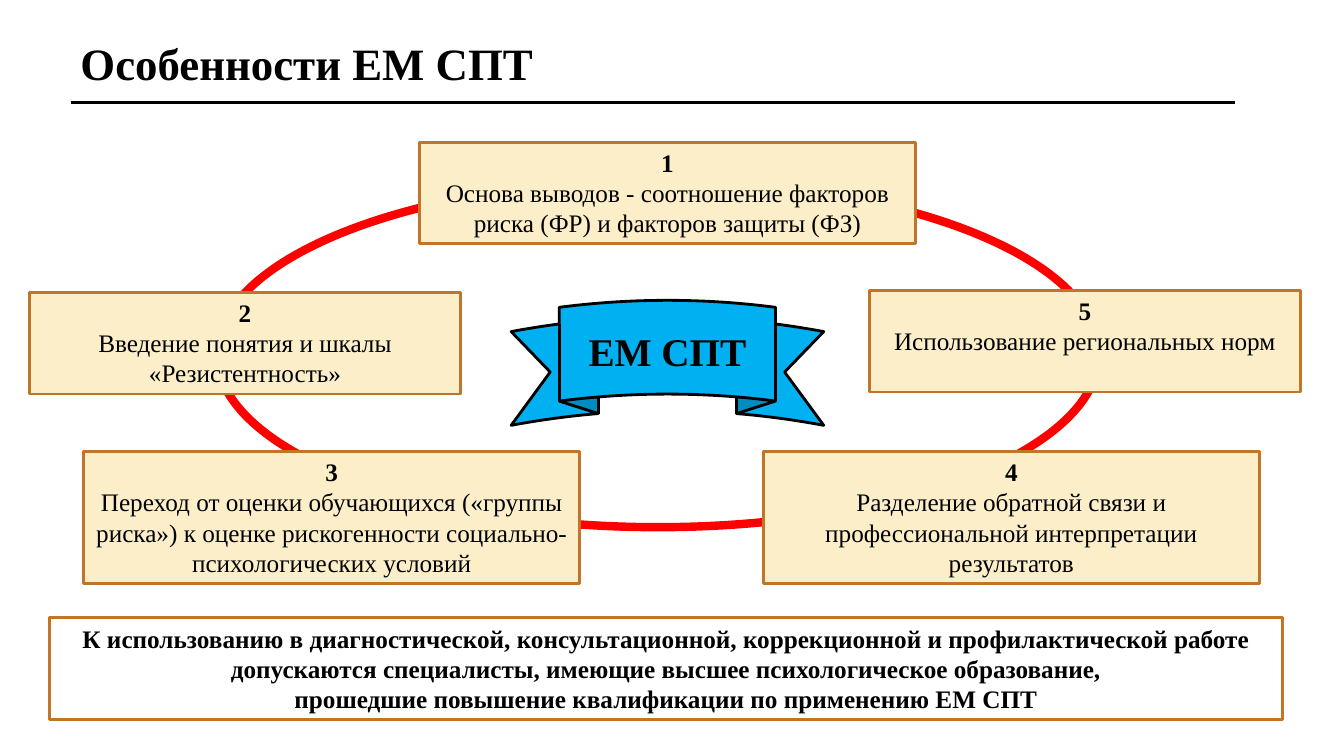
from dataclasses import dataclass

from lxml import etree
from pptx import Presentation
from pptx.dml.color import RGBColor
from pptx.enum import shapes, text
from pptx.oxml.ns import qn
from pptx.shapes.autoshape import Shape
from pptx.slide import Slide
from pptx.util import Inches, Pt


@dataclass(frozen=True)
class Theme:
    font: str = "Times New Roman"
    black: str = "000000"
    white: str = "FFFFFF"
    ring: str = "FF0000"
    ribbon: str = "00B0F0"
    card: str = "FBEEC9"
    border: str = "C17529"
    title_pt: int = 32
    ribbon_pt: int = 28
    body_pt: int = 18
    line_pt: int = 2
    ring_pt: int = 6


@dataclass(frozen=True)
class Box:
    left: float
    top: float
    width: float
    height: float


@dataclass(frozen=True)
class Card:
    number: int
    body: str
    box: Box


T = Theme()
TOP_W, SIDE_W = 4.92, 4.28
SHORT_H, TALL_H = 1.01, 1.31
LOWER_Y = 4.48

CARDS = [
    Card(1, "Основа выводов - соотношение факторов риска (ФР) и факторов защиты (ФЗ)",
         Box(4.16, 1.41, TOP_W, SHORT_H)),
    Card(3, "Переход от оценки обучающихся («группы риска») к оценке рискогенности "
            "социально-психологических условий",
         Box(0.83, LOWER_Y, TOP_W, TALL_H)),
    Card(2, "Введение понятия и шкалы «Резистентность»",
         Box(0.29, 2.9, SIDE_W, SHORT_H)),
    Card(4, "Разделение обратной связи и профессиональной интерпретации результатов",
         Box(7.57, LOWER_Y, TOP_W, TALL_H)),
    Card(5, "Использование региональных норм",
         Box(8.62, 2.88, SIDE_W, SHORT_H)),
]

ADMISSION = [
    "К использованию в диагностической, консультационной, коррекционной и "
    "профилактической работе",
    "допускаются специалисты, имеющие высшее психологическое образование,",
    "прошедшие повышение квалификации по применению ЕМ СПТ",
]


def rgb(color: str) -> RGBColor:
    return RGBColor.from_string(color)


def add_figure(s: Slide, kind: shapes.MSO_SHAPE, box: Box, line: str,
               fill: str | None = None, line_pt: int = T.line_pt) -> Shape:
    """Add a shadowless preset shape; without a fill colour it is hollow."""
    sp = s.shapes.add_shape(kind, Inches(box.left), Inches(box.top),
                            Inches(box.width), Inches(box.height))
    sp.shadow.inherit = False
    if fill:
        sp.fill.solid()
        sp.fill.fore_color.rgb = rgb(fill)
    else:
        sp.fill.background()
    sp.line.color.rgb = rgb(line)
    sp.line.width = Pt(line_pt)
    return sp


def write(sp: Shape, lines: list[str], size: int, bold_lines: int,
          align: text.PP_ALIGN = text.PP_ALIGN.CENTER,
          anchor: text.MSO_ANCHOR = text.MSO_ANCHOR.TOP, wrap: bool = True) -> None:
    """Write one paragraph per line; the first bold_lines are bold."""
    tf = sp.text_frame
    tf.word_wrap = wrap
    tf.vertical_anchor = anchor
    for i, line in enumerate(lines):
        p = tf.add_paragraph() if i else tf.paragraphs[0]
        p.text = line
        p.alignment = align
        p.font.name = T.font
        p.font.size = Pt(size)
        p.font.bold = i < bold_lines
        p.font.color.rgb = rgb(T.black)


def add_title(s: Slide) -> None:
    tb = s.shapes.add_textbox(Inches(0.7), Inches(0.31), Inches(4.74), Inches(0.64))
    write(tb, ["Особенности ЕМ СПТ"], T.title_pt, 1, text.PP_ALIGN.LEFT, wrap=False)
    rule = s.shapes.add_connector(shapes.MSO_CONNECTOR.STRAIGHT, Inches(0.7),
                                  Inches(1.02), Inches(12.25), Inches(1.02))
    rule.line.color.rgb = rgb(T.black)
    rule.line.width = Pt(T.line_pt)
    etree.SubElement(rule._element.spPr, qn("a:effectLst"))


def add_ribbon(s: Slide) -> None:
    ribbon = add_figure(s, shapes.MSO_SHAPE.CURVED_UP_RIBBON,
                        Box(5.07, 2.98, 3.1, 1.24), T.black, T.ribbon)
    for i, value in enumerate((0.25, 0.692, 0.117)):
        ribbon.adjustments[i] = value
    write(ribbon, ["ЕМ СПТ"], T.ribbon_pt, 1, anchor=text.MSO_ANCHOR.MIDDLE)


def main() -> None:
    prs = Presentation()
    prs.slide_width, prs.slide_height = Inches(13.33), Inches(7.5)
    s = prs.slides.add_slide(prs.slide_layouts[6])

    add_figure(s, shapes.MSO_SHAPE.OVAL, Box(2.15, 1.79, 8.75, 3.44), T.ring,
               line_pt=T.ring_pt)
    add_ribbon(s)
    admission = add_figure(s, shapes.MSO_SHAPE.RECTANGLE,
                           Box(0.49, 6.13, 12.23, SHORT_H), T.border, T.white)
    write(admission, ADMISSION, T.body_pt, len(ADMISSION))
    for card in CARDS:
        sp = add_figure(s, shapes.MSO_SHAPE.RECTANGLE, card.box, T.border, T.card)
        write(sp, [str(card.number), card.body], T.body_pt, 1)
    add_title(s)

    prs.save("out.pptx")


if __name__ == "__main__":
    main()
